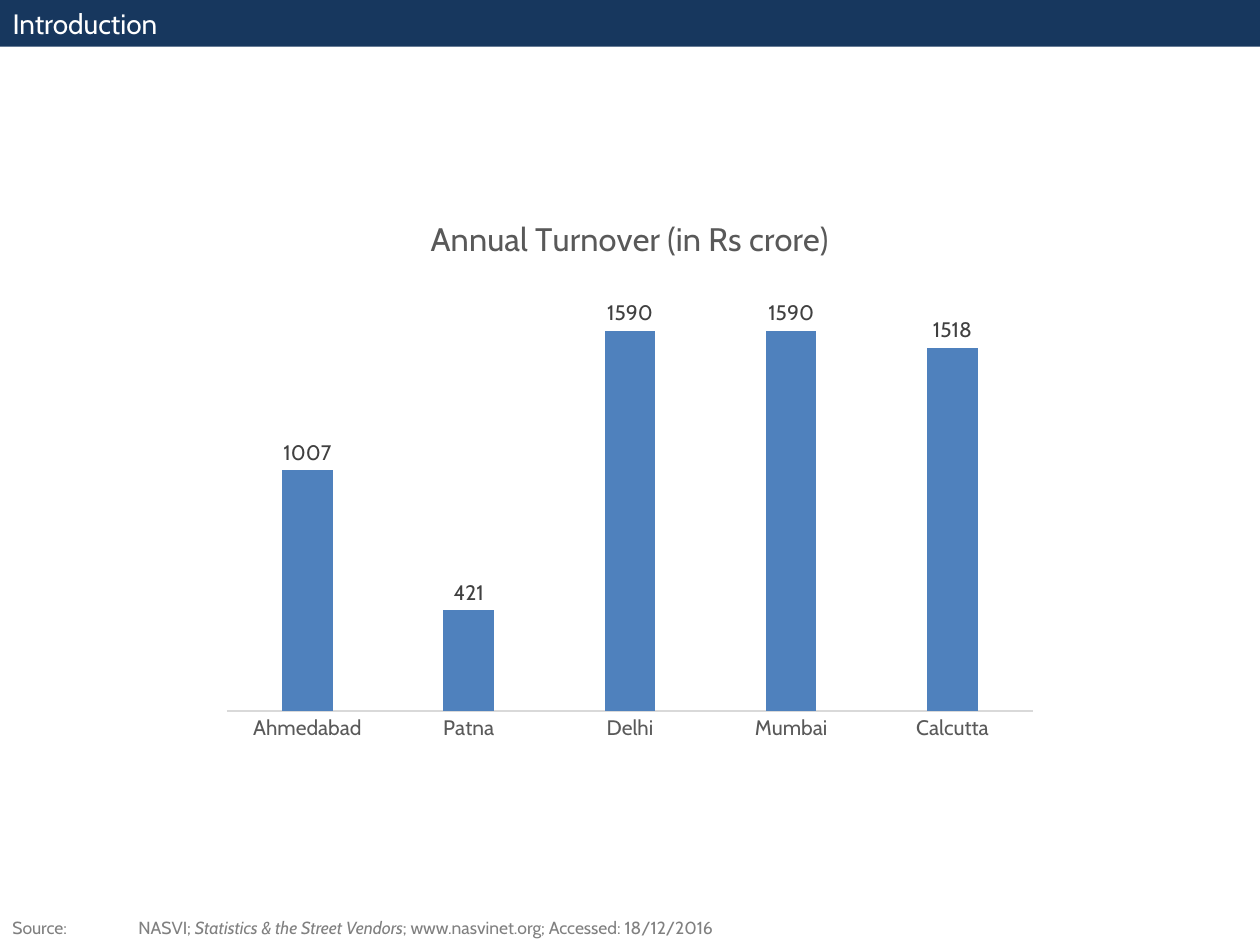
from lxml import etree
from pptx import Presentation
from pptx.chart.data import CategoryChartData
from pptx.dml.color import RGBColor
from pptx.enum.chart import XL_CHART_TYPE, XL_LABEL_POSITION, XL_TICK_MARK
from pptx.enum.text import MSO_ANCHOR, MSO_AUTO_SIZE, PP_ALIGN
from pptx.oxml.ns import qn
from pptx.util import Cm, Pt

COLUMNS = XL_CHART_TYPE.COLUMN_CLUSTERED
OUTSIDE_END = XL_LABEL_POSITION.OUTSIDE_END
NO_TICK = XL_TICK_MARK.NONE
MIDDLE = MSO_ANCHOR.MIDDLE
NO_AUTOFIT = MSO_AUTO_SIZE.NONE
LEFT = PP_ALIGN.LEFT

FONT = "Cabin"
SLIDE_WIDTH, SLIDE_HEIGHT = Cm(25.4), Cm(19.05)
HEADER_HEIGHT = Cm(0.94)
SOURCE_HEIGHT = Cm(0.69)
SOURCE_TAB = Cm(2.54)
TURNOVER_TITLE = "Annual Turnover (in Rs crore)"
TURNOVER = {"Ahmedabad": 1007, "Patna": 421, "Delhi": 1590, "Mumbai": 1590, "Calcutta": 1518}
SOURCE = [
    ("Source:\tNASVI; ", False),
    ("Statistics & the Street Vendors", True),
    ("; www.nasvinet.org; Accessed: 18/12/2016", False),
]


def color(value):
    return RGBColor.from_string(value)


def apply(target, values):
    for name, value in values.items():
        setattr(target, name, value)


def style_font(font, size, shade, **extra):
    apply(font, {"name": FONT, "size": Pt(size), "bold": False, **extra})
    font.color.rgb = color(shade)


def add_tab_stop(paragraph, position):
    stops = etree.SubElement(paragraph._p.get_or_add_pPr(), qn("a:tabLst"))
    etree.SubElement(stops, qn("a:tab"), pos=str(position), algn="l")


def set_header(slide, text):
    header = slide.shapes.title
    apply(header, {"left": 0, "top": 0, "width": SLIDE_WIDTH, "height": HEADER_HEIGHT})
    header.fill.solid()
    header.fill.fore_color.rgb = color("17375E")
    frame = header.text_frame
    apply(frame, {"text": text, "vertical_anchor": MIDDLE, "auto_size": NO_AUTOFIT, "word_wrap": True})
    heading = frame.paragraphs[0]
    heading.alignment = LEFT
    style_font(heading.runs[0].font, 16, "FFFFFF")


def add_source(slide, parts):
    box = slide.shapes.add_textbox(0, SLIDE_HEIGHT - SOURCE_HEIGHT, SLIDE_WIDTH, SOURCE_HEIGHT)
    box.text_frame.word_wrap = True
    citation = box.text_frame.paragraphs[0]
    add_tab_stop(citation, SOURCE_TAB)
    for text, italic in parts:
        run = citation.add_run()
        run.text = text
        style_font(run.font, 10, "808080", italic=italic)


def add_turnover_chart(slide, title, turnover):
    data = CategoryChartData()
    data.categories = list(turnover)
    data.add_series(title, list(turnover.values()))
    width, height = Cm(16.93), Cm(11.28)
    left, top = (SLIDE_WIDTH - width) // 2, (SLIDE_HEIGHT - height) // 2
    chart = slide.shapes.add_chart(COLUMNS, left, top, width, height, data).chart
    apply(chart, {"has_legend": False, "has_title": True})
    style_font(chart.font, 10, "000000")

    heading = chart.chart_title
    heading.include_in_layout = False
    heading.text_frame.text = title
    style_font(heading.text_frame.paragraphs[0].runs[0].font, 18.6, "595959")

    cities = chart.category_axis
    apply(cities, {"major_tick_mark": NO_TICK, "minor_tick_mark": NO_TICK})
    style_font(cities.tick_labels.font, 12, "595959")
    cities.format.line.color.rgb = color("D9D9D9")
    cities.format.line.width = Pt(0.75)
    apply(chart.value_axis, {"visible": False, "has_major_gridlines": False, "minimum_scale": 0})

    plot = chart.plots[0]
    apply(plot, {"gap_width": 219, "overlap": -27, "vary_by_categories": False})
    columns = plot.series[0]
    columns.format.fill.solid()
    columns.format.fill.fore_color.rgb = color("4F81BD")
    labels = columns.data_labels
    apply(labels, {"show_value": True, "position": OUTSIDE_END})
    style_font(labels.font, 12, "404040")


def main():
    deck = Presentation()
    apply(deck, {"slide_width": SLIDE_WIDTH, "slide_height": SLIDE_HEIGHT})
    slide = deck.slides.add_slide(deck.slide_layouts.get_by_name("Title Only"))
    set_header(slide, "Introduction")
    add_source(slide, SOURCE)
    add_turnover_chart(slide, TURNOVER_TITLE, TURNOVER)
    deck.save("out.pptx")


if __name__ == "__main__":
    main()
